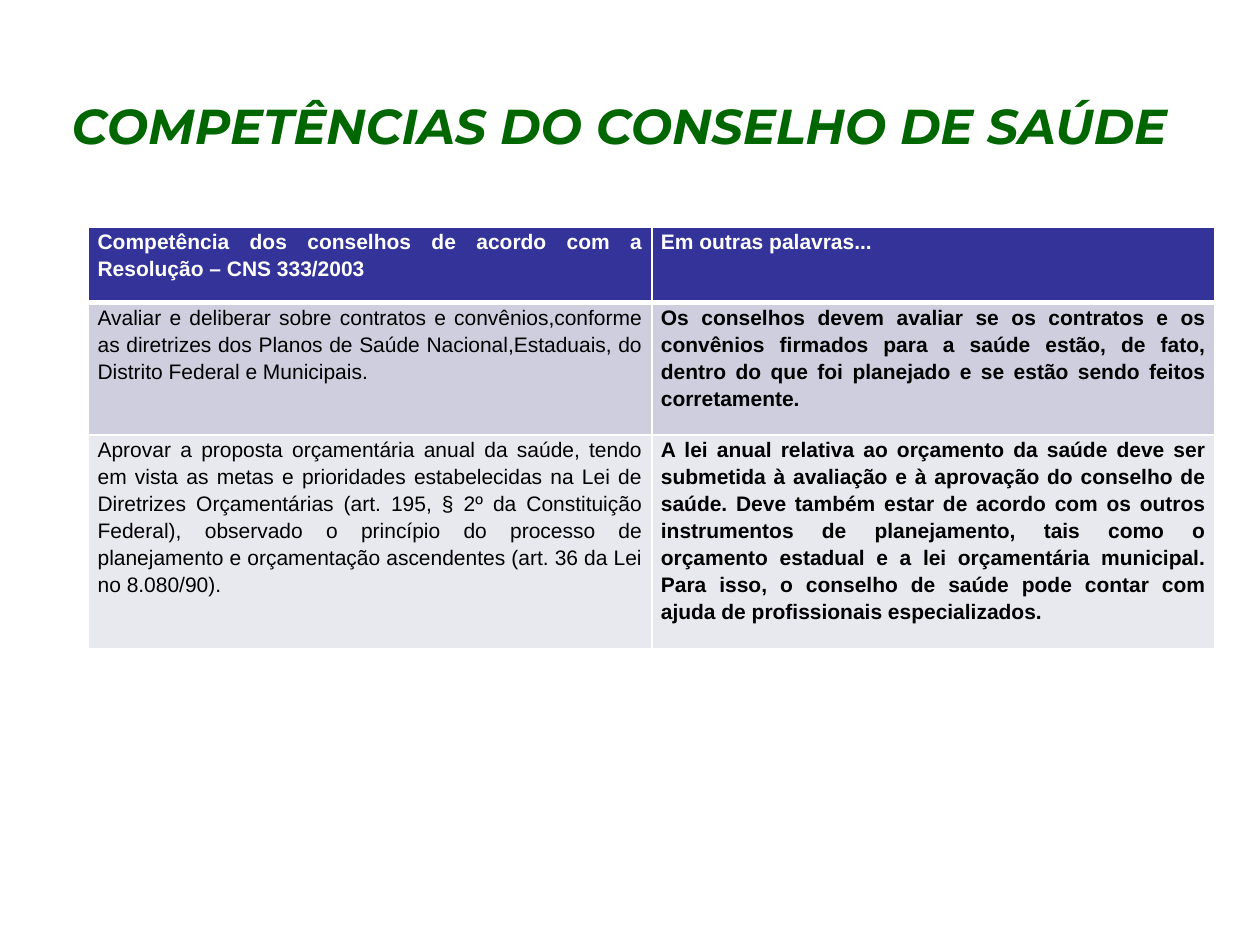
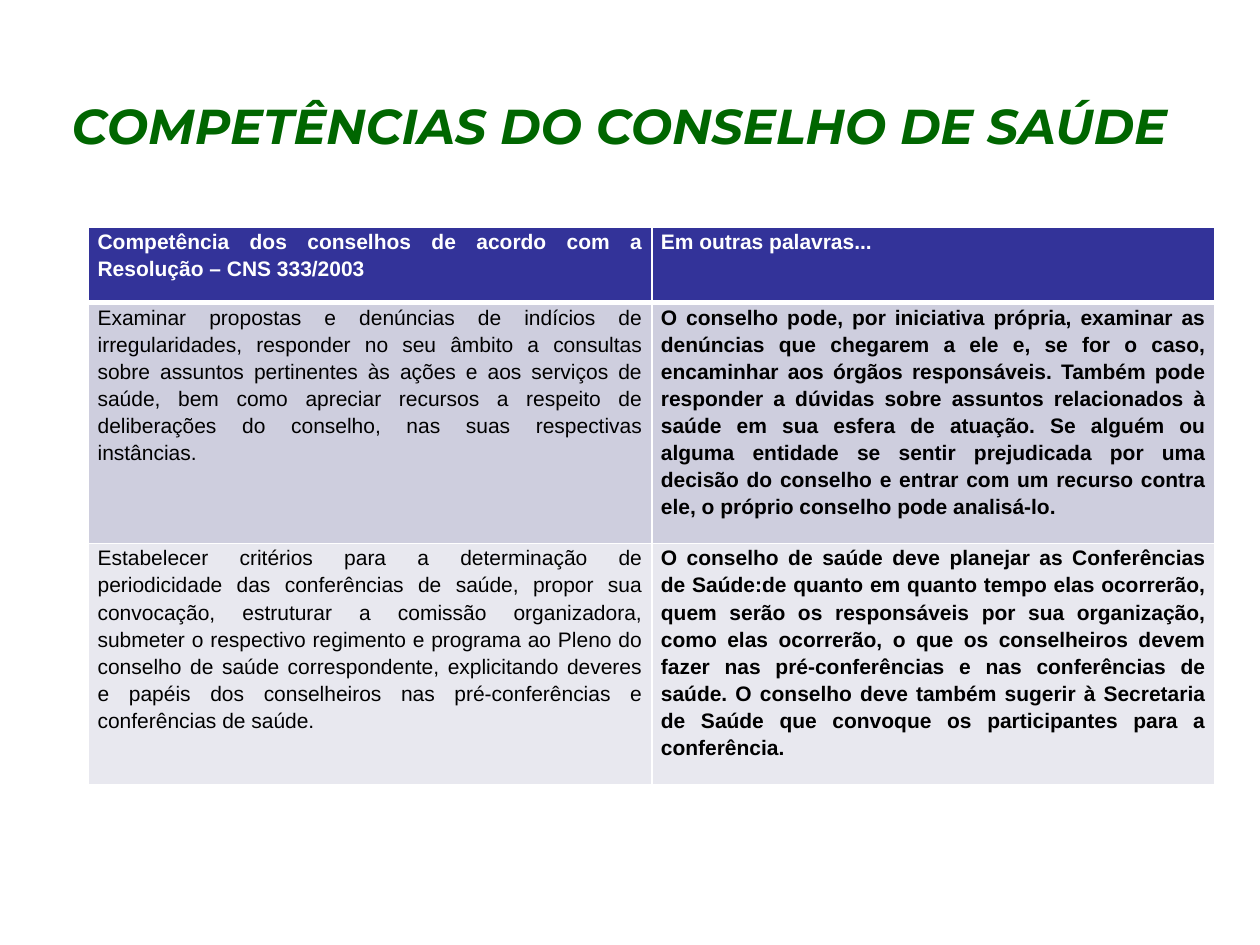
"""Build two slides on the duties of the health council, each a title over a comparison table."""
from pptx import Presentation
from pptx.dml.color import RGBColor
from pptx.enum.text import MSO_ANCHOR as Anchor, PP_ALIGN as Align
from pptx.oxml import parse_xml
from pptx.oxml.ns import nsdecls
from pptx.util import Pt

GREEN = RGBColor(0x00, 0x66, 0x00)
INDIGO = RGBColor(0x33, 0x33, 0x99)
LAVENDER = RGBColor(0xCE, 0xCE, 0xDE)
PALE = RGBColor(0xE8, 0xE8, 0xEF)
WHITE = RGBColor(0xFF, 0xFF, 0xFF)
BLACK = RGBColor(0x00, 0x00, 0x00)

HEADING = "COMPETÊNCIAS DO CONSELHO DE SAÚDE"
COLUMN_HEADS = ("Competência dos conselhos de acordo com a Resolução – CNS 333/2003",
                "Em outras palavras...")
ROW_FILLS = (INDIGO, LAVENDER, PALE)
COLUMN_WIDTH = 321.9
HEADER_HEIGHT = 43.2

COMPETENCES = [
    [
        (75.7,
         "Avaliar e deliberar sobre contratos e convênios,conforme as diretrizes dos Planos de "
         "Saúde Nacional,Estaduais, do Distrito Federal e Municipais.",
         "Os conselhos devem avaliar se os contratos e os convênios firmados para a saúde estão, "
         "de fato, dentro do que foi planejado e se estão sendo feitos corretamente."),
        (122.2,
         "Aprovar a proposta orçamentária anual da saúde, tendo em vista as metas e prioridades "
         "estabelecidas na Lei de Diretrizes Orçamentárias (art. 195, § 2º da Constituição "
         "Federal), observado o princípio do processo de planejamento e orçamentação ascendentes "
         "(art. 36 da Lei no 8.080/90).",
         "A lei anual relativa ao orçamento da saúde deve ser submetida à avaliação e à aprovação "
         "do conselho de saúde. Deve também estar de acordo com os outros instrumentos de "
         "planejamento, tais como o orçamento estadual e a lei orçamentária municipal. Para isso, "
         "o conselho de saúde pode contar com ajuda de profissionais especializados."),
    ],
    [
        (137.7,
         "Examinar propostas e denúncias de indícios de irregularidades, responder no seu âmbito "
         "a consultas sobre assuntos pertinentes às ações e aos serviços de saúde, bem como "
         "apreciar recursos a respeito de deliberações do conselho, nas suas respectivas "
         "instâncias.",
         "O conselho pode, por iniciativa própria, examinar as denúncias que chegarem a ele e, se "
         "for o caso, encaminhar aos órgãos responsáveis. Também pode responder a dúvidas sobre "
         "assuntos relacionados à saúde em sua esfera de atuação. Se alguém ou alguma entidade se "
         "sentir prejudicada por uma decisão do conselho e entrar com um recurso contra ele, o "
         "próprio conselho pode analisá-lo."),
        (137.7,
         "Estabelecer critérios para a determinação de periodicidade das conferências de saúde, "
         "propor sua convocação, estruturar a comissão organizadora, submeter o respectivo "
         "regimento e programa ao Pleno do conselho de saúde correspondente, explicitando deveres "
         "e papéis dos conselheiros nas pré-conferências e conferências de saúde.",
         "O conselho de saúde deve planejar as Conferências de Saúde:de quanto em quanto tempo "
         "elas ocorrerão, quem serão os responsáveis por sua organização, como elas ocorrerão, o "
         "que os conselheiros devem fazer nas pré-conferências e nas conferências de saúde. O "
         "conselho deve também sugerir à Secretaria de Saúde que convoque os participantes para a "
         "conferência."),
    ],
]


def add_styled_run(paragraph, text, font_name, size, color, bold, italic=False):
    run = paragraph.add_run()
    run.text = text
    font = run.font
    font.name, font.size, font.bold, font.italic = font_name, Pt(size), bold, italic
    font.color.rgb = color


def add_border(cell, side, width):
    cell._tc.get_or_add_tcPr().append(parse_xml(
        f'<a:{side} {nsdecls("a")} w="{Pt(width)}"><a:solidFill>'
        f'<a:srgbClr val="{WHITE}"/></a:solidFill></a:{side}>'))


deck = Presentation()
deck.slide_width, deck.slide_height = Pt(720), Pt(540)

for competences in COMPETENCES:
    slide = deck.slides.add_slide(deck.slide_layouts[5])

    title = slide.shapes.title
    title.left, title.top, title.width, title.height = Pt(33.8), Pt(26.6), Pt(655.2), Pt(90)
    title.text_frame.vertical_anchor = Anchor.MIDDLE
    heading = title.text_frame.paragraphs[0]
    heading.alignment = Align.LEFT
    add_styled_run(heading, HEADING, "Montserrat", 28, GREEN, True, True)

    rows = [(HEADER_HEIGHT, *COLUMN_HEADS), *competences]
    table_height = sum(row[0] for row in rows)
    comparison = slide.shapes.add_table(len(rows), 2, Pt(50.6), Pt(129.6),
                                        Pt(2 * COLUMN_WIDTH), Pt(table_height)).table
    comparison.horz_banding = False
    for column in comparison.columns:
        column.width = Pt(COLUMN_WIDTH)

    for row_index, (height, *texts) in enumerate(rows):
        comparison.rows[row_index].height = Pt(height)
        is_header = row_index == 0
        for column_index, text in enumerate(texts):
            cell = comparison.cell(row_index, column_index)
            cell.margin_left = cell.margin_right = Pt(5.2)
            cell.margin_top = cell.margin_bottom = Pt(0)
            for side in ("lnL", "lnR", "lnT", "lnB"):
                under_header = (side, row_index) in (("lnB", 0), ("lnT", 1))
                add_border(cell, side, 3 if under_header else 1)
            cell.fill.solid()
            cell.fill.fore_color.rgb = ROW_FILLS[row_index]
            statement = cell.text_frame.paragraphs[0]
            statement.alignment = Align.JUSTIFY
            statement.line_spacing = 1.15
            add_styled_run(statement, text, "Arial", 12, WHITE if is_header else BLACK,
                           is_header or column_index == 1)

deck.save("out.pptx")
